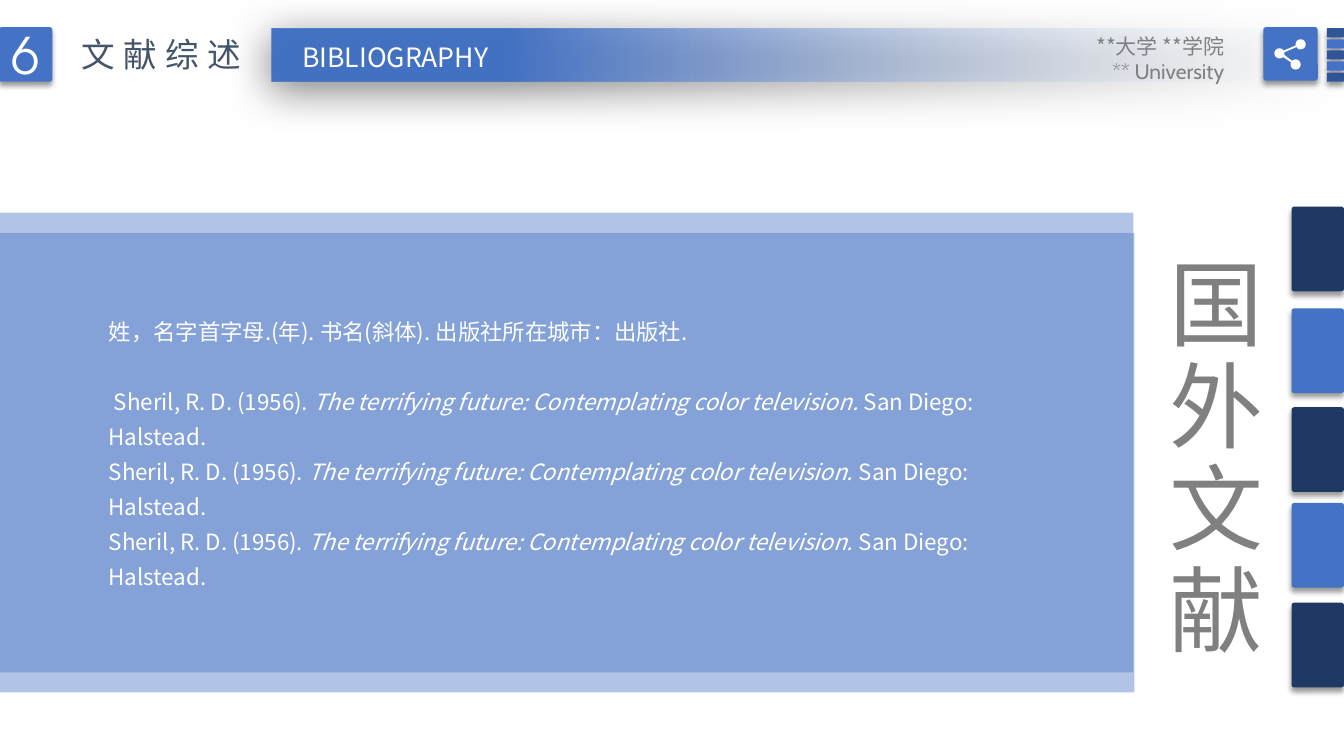
from dataclasses import dataclass
from math import cos, radians, sin

from lxml.etree import SubElement
from pptx import Presentation
from pptx.dml.color import RGBColor
from pptx.enum.shapes import MSO_SHAPE as Shape
from pptx.enum.text import MSO_ANCHOR as Anchor, MSO_AUTO_SIZE as AutoSize, PP_ALIGN as Align
from pptx.oxml import parse_xml
from pptx.oxml.ns import nsdecls, qn
from pptx.util import Inches, Pt


@dataclass(frozen=True)
class Theme:
    blue: str = "4472C4"
    navy: str = "203864"
    stripe: str = "2F5597"
    pale: str = "F7FAFD"
    slate: str = "44546A"
    gray: str = "808080"
    white: str = "FFFFFF"
    cjk: str = "Noto Sans CJK SC"
    number_font: str = "TeX Gyre Adventor"
    latin: str = "Cabin"
    side: float = 67
    number: float = 36
    title: float = 24
    subtitle: float = 19
    body: float = 16
    school: float = 15


THEME = Theme()
TILE_SHADOW = (40, 4, 3, 90)
BAR_SHADOW = (50, 31, 6, 97)
TILE_TOPS = (2.05, 3.06, 4.04, 4.99, 5.98)
CITATION = (
    ("Sheril, R. D. (1956). ", False),
    ("The terrifying future: Contemplating color television. ", True),
    ("San Diego: Halstead.", False),
)


def add_shadow(shape, alpha, blur, distance, angle):
    shape._element.spPr.append(parse_xml(
        f'<a:effectLst {nsdecls("a")}><a:outerShdw blurRad="{Pt(blur)}" '
        f'dist="{Pt(distance)}" dir="{angle * 60000}" algn="t" rotWithShape="0">'
        f'<a:srgbClr val="000000"><a:alpha val="{alpha * 1000}"/></a:srgbClr>'
        f'</a:outerShdw></a:effectLst>'))


def add_block(page, left, top, width, height, color, corner=0.05, shadow=None, alpha=None):
    """Rounded block; alpha is opacity in percent, shadow is (opacity, blur, distance, angle)."""
    block = page.shapes.add_shape(
        Shape.ROUNDED_RECTANGLE, Inches(left), Inches(top), Inches(width), Inches(height))
    block.adjustments[0] = corner
    block.fill.solid()
    block.fill.fore_color.rgb = RGBColor.from_string(color)
    block.line.fill.background()
    if alpha is not None:
        tint = block._element.spPr.find(qn("a:solidFill"))[0]
        SubElement(tint, qn("a:alpha")).set("val", str(alpha * 1000))
    if shadow:
        add_shadow(block, *shadow)
    else:
        block.shadow.inherit = False
    return block


def add_header_bar(page):
    bar = page.shapes.add_shape(
        Shape.RECTANGLE, Inches(2.69), Inches(0.28), Inches(10.65), Inches(0.53))
    bar.line.fill.background()
    properties = bar._element.spPr
    properties.find(qn("a:prstGeom")).addnext(parse_xml(
        f'<a:gradFill {nsdecls("a")} rotWithShape="1"><a:gsLst>'
        f'<a:gs pos="0"><a:srgbClr val="{THEME.pale}"><a:alpha val="0"/></a:srgbClr></a:gs>'
        f'<a:gs pos="78000"><a:srgbClr val="{THEME.blue}"/></a:gs>'
        f'</a:gsLst><a:lin ang="10800000" scaled="0"/></a:gradFill>'))
    add_shadow(bar, *BAR_SHADOW)


def write(para, text, size, color, font=THEME.cjk, italic=None, spacing=0):
    span = para.add_run()
    span.text = text
    span.font.size = Pt(size)
    span.font.italic = italic
    span.font.color.rgb = RGBColor.from_string(color)
    span.font.name = font
    properties = span._r.get_or_add_rPr()
    properties.find(qn("a:latin")).addnext(
        parse_xml(f'<a:ea {nsdecls("a")} typeface="{font}"/>'))
    if spacing:
        properties.set("spc", str(spacing * 100))


def add_text_frame(page, left, top, width, height, wrap=False):
    box = page.shapes.add_textbox(Inches(left), Inches(top), Inches(width), Inches(height))
    frame = box.text_frame
    frame.word_wrap = wrap
    frame.auto_size = AutoSize.SHAPE_TO_FIT_TEXT
    return frame


def add_label(page, left, top, width, height, text, size, color, align=None, spacing=0):
    frame = add_text_frame(page, left, top, width, height)
    para = frame.paragraphs[0]
    para.alignment = align
    write(para, text, size, color, spacing=spacing)
    return frame


def add_references(page):
    frame = add_text_frame(page, 0.98, 3.03, 8.91, 3.24, wrap=True)
    pattern = (("姓，名字首字母.(年). 书名(斜体). 出版社所在城市：出版社.", None),)
    for index, spans in enumerate((pattern, CITATION, CITATION, CITATION)):
        para = frame.add_paragraph() if index else frame.paragraphs[0]
        para.line_spacing = 1.3
        if index == 0:
            para.space_after = Pt(25)
        elif index == 1:
            para._p.get_or_add_pPr().set("indent", str(Inches(0.05)))
        for text, italic in spans:
            write(para, text, THEME.body, THEME.white, italic=italic)


def add_school(page):
    frame = add_text_frame(page, 10.15, 0.28, 2.37, 0.63, wrap=True)
    school, university = frame.paragraphs[0], frame.add_paragraph()
    school.alignment = university.alignment = Align.RIGHT
    school._p.get_or_add_pPr().set("marR", str(Inches(0.28)))
    write(school, "**大学 **学院", THEME.school, THEME.gray)
    write(university, "** University", THEME.school, THEME.gray, font=THEME.latin)


def add_share_icon(page):
    """Three round nodes joined by two links, traced clockwise as one outline."""
    top, left, bottom = (12.9, 0.44), (12.69, 0.53), (12.85, 0.64)
    arcs = ((top, 167, 507), (left, -13, 26), (bottom, 226, 566), (left, 46, 327))
    radius = 0.05
    points = [
        (Inches(x + radius * cos(radians(angle))), Inches(y + radius * sin(radians(angle))))
        for (x, y), start, end in arcs
        for angle in range(start, end + 1, 10)
    ]
    outline = page.shapes.build_freeform(*points[0])
    outline.add_line_segments(points[1:], close=True)
    icon = outline.convert_to_shape()
    icon.fill.solid()
    icon.fill.fore_color.rgb = RGBColor.from_string(THEME.white)
    icon.line.fill.background()
    icon.shadow.inherit = False


def add_number_badge(page):
    badge = add_block(page, -0.01, 0.27, 0.53, 0.54, THEME.blue, shadow=TILE_SHADOW)
    badge.text_frame.vertical_anchor = Anchor.MIDDLE
    para = badge.text_frame.paragraphs[0]
    para.alignment = Align.CENTER
    write(para, "6", THEME.number, THEME.white, font=THEME.number_font)


def main():
    deck = Presentation()
    deck.slide_width, deck.slide_height = Inches(13.33), Inches(7.5)
    page = deck.slides.add_slide(deck.slide_layouts[6])

    for left, top in ((0, 2.31), (-0.01, 2.11)):
        add_block(page, left, top, 11.25, 4.56, THEME.blue, corner=0, alpha=41)
    side = add_label(page, 11.31, 2.45, 1.33, 4.11, "国外文献",
                     THEME.side, THEME.gray, spacing=6)
    side._txBody.bodyPr.set("vert", "eaVert")
    add_references(page)

    add_header_bar(page)
    add_number_badge(page)
    add_label(page, 0.71, 0.29, 1.8, 0.5, "文献综述", THEME.title, THEME.slate, spacing=6)
    add_label(page, 2.85, 0.36, 2.14, 0.42, "BIBLIOGRAPHY",
              THEME.subtitle, THEME.white, align=Align.CENTER)
    for row in range(5):
        color = THEME.blue if row % 2 else THEME.stripe
        add_block(page, 13.16, 0.28 + 0.11 * row, 0.17, 0.09, color, shadow=TILE_SHADOW)
    add_block(page, 12.53, 0.27, 0.54, 0.53, THEME.blue, shadow=TILE_SHADOW)
    add_share_icon(page)
    add_school(page)

    for index, top in enumerate(TILE_TOPS):
        color = THEME.blue if index % 2 else THEME.navy
        add_block(page, 12.81, top, 0.52, 0.84, color, shadow=TILE_SHADOW)
    deck.save("out.pptx")


if __name__ == "__main__":
    main()
